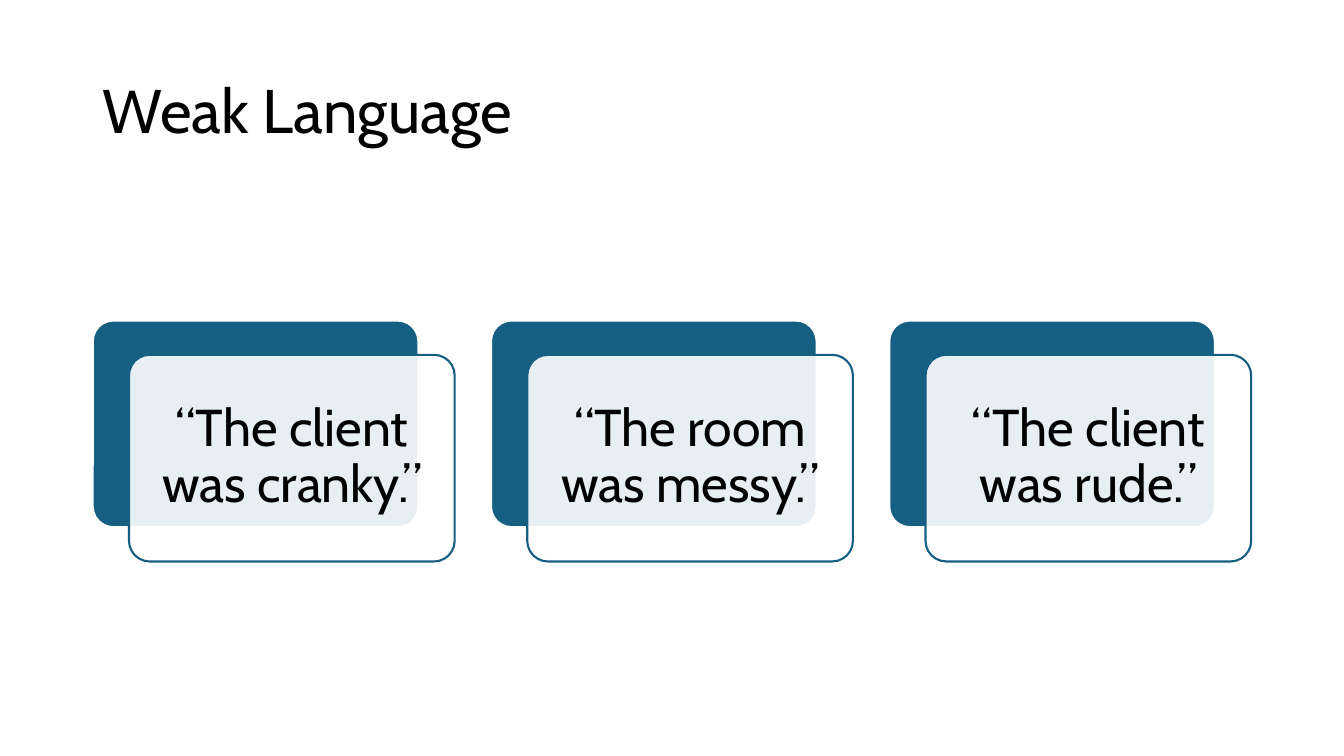
"""Build the Weak Language slide with three quoted examples on layered cards."""
from lxml import etree
from pptx import Presentation
from pptx import util as u
from pptx.dml.color import RGBColor
from pptx.enum import shapes, text
from pptx.oxml import ns

PX = u.Inches(1) // 100
TEAL = RGBColor(0x15, 0x60, 0x82)
WHITE = RGBColor(0xFF, 0xFF, 0xFF)
BLACK = RGBColor(0x00, 0x00, 0x00)

QUOTES = ["“The client was cranky.”", "“The room was messy.”", "“The client was rude.”"]
CARD_LEFT, CARD_TOP, CARD_WIDTH, CARD_HEIGHT = 92, 318, 323, 205
CARD_PITCH = 395
OFFSET_X, OFFSET_Y = 36, 34
QUOTE_INSET = 6

deck = Presentation()
deck.slide_width, deck.slide_height = 1333 * PX, 750 * PX
slide = deck.slides.add_slide(deck.slide_layouts[6])


def add_card(left, top, fill, line):
    card = slide.shapes.add_shape(
        shapes.MSO_SHAPE.ROUNDED_RECTANGLE,
        left * PX, top * PX, CARD_WIDTH * PX, CARD_HEIGHT * PX)
    card.adjustments[0] = 0.1
    card.shadow.inherit = False
    card.fill.solid()
    card.fill.fore_color.rgb = fill
    card.line.color.rgb = line
    card.line.width = u.Pt(1.5)
    return card


def add_words(words, left, top, width, height, size, align, margins):
    box = slide.shapes.add_textbox(left * PX, top * PX, width * PX, height * PX)
    frame = box.text_frame
    frame_format = {"word_wrap": True, "vertical_anchor": text.MSO_ANCHOR.MIDDLE, **margins}
    for key, value in frame_format.items():
        setattr(frame, key, value)
    paragraph = frame.paragraphs[0]
    paragraph.alignment = align
    paragraph.line_spacing = 0.9
    run = paragraph.add_run()
    run.text = words
    for key, value in {"name": "Cabin", "size": u.Pt(size)}.items():
        setattr(run.font, key, value)
    run.font.color.rgb = BLACK


add_words("Weak Language", 92, 40, 1150, 145, 44, text.PP_ALIGN.LEFT, {})

quote_margins = {f"margin_{side}": 15 * PX for side in ("left", "top", "right", "bottom")}
for index, quote in enumerate(QUOTES):
    left = CARD_LEFT + index * CARD_PITCH
    add_card(left, CARD_TOP, TEAL, WHITE)

    front_left, front_top = left + OFFSET_X, CARD_TOP + OFFSET_Y
    front = add_card(front_left, front_top, WHITE, TEAL)
    front_color = front.fill._xPr.find(ns.qn("a:solidFill"))[0]
    etree.SubElement(front_color, ns.qn("a:alpha"), val="90000")

    add_words(quote, front_left + QUOTE_INSET, front_top + QUOTE_INSET,
              CARD_WIDTH - 2 * QUOTE_INSET, CARD_HEIGHT - 2 * QUOTE_INSET,
              37, text.PP_ALIGN.CENTER, quote_margins)

deck.save("out.pptx")
